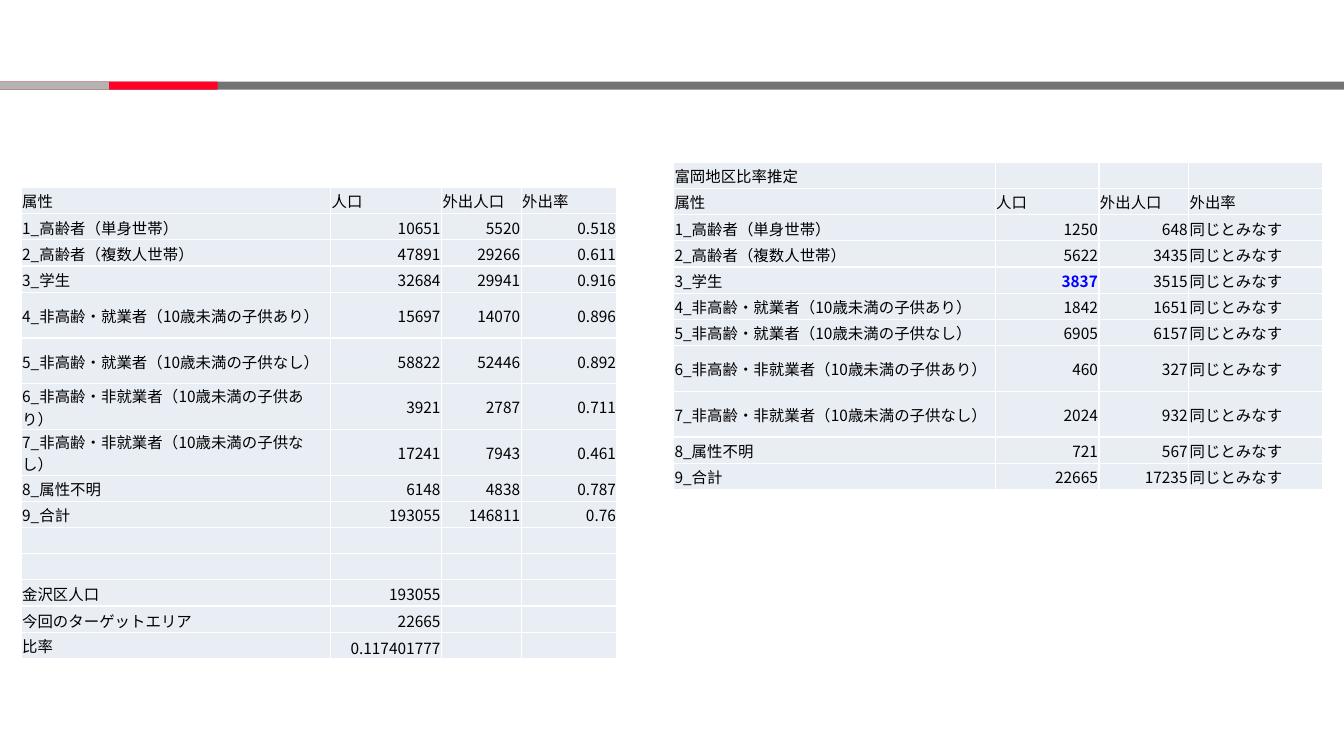
"""Build a slide with two population tables under a three-colour bar."""
from lxml.etree import SubElement
from pptx import Presentation
from pptx.dml.color import RGBColor
from pptx.enum.shapes import MSO_SHAPE
from pptx.enum.text import MSO_ANCHOR, PP_ALIGN
from pptx.oxml import parse_xml
from pptx.oxml.ns import nsdecls, qn
from pptx.util import Inches, Pt

FONT = "Noto Sans CJK JP"
BLACK = RGBColor(0x00, 0x00, 0x00)
BLUE = RGBColor(0x00, 0x00, 0xFF)
PALE = RGBColor(0xE9, 0xED, 0xF4)
DARK = RGBColor(0x73, 0x73, 0x73)
RED = RGBColor(0xFF, 0x00, 0x26)
GREY = RGBColor(0xB3, 0xB3, 0xB3)
ROW = 0.26

deck = Presentation()
deck.slide_width, deck.slide_height = Inches(13.33), Inches(7.5)
slide = deck.slides.add_slide(deck.slide_layouts[6])

for wide, color in [(13.33, DARK), (2.16, RED), (1.08, GREY)]:
    bar = slide.shapes.add_shape(
        MSO_SHAPE.RECTANGLE, 0, Inches(0.81), Inches(wide), Inches(0.08))
    bar.shadow.inherit = False
    bar.fill.solid()
    bar.fill.fore_color.rgb = color
    bar.line.fill.background()

HEAD = ("属性", "人口", "外出人口", "外出率")
KINDS = [
    "1_高齢者（単身世帯）",
    "2_高齢者（複数人世帯）",
    "3_学生",
    "4_非高齢・就業者（10歳未満の子供あり）",
    "5_非高齢・就業者（10歳未満の子供なし）",
    "6_非高齢・非就業者（10歳未満の子供あり）",
    "7_非高齢・非就業者（10歳未満の子供なし）",
    "8_属性不明",
    "9_合計",
]
WARD = [
    ("10651", "5520", "0.518"),
    ("47891", "29266", "0.611"),
    ("32684", "29941", "0.916"),
    ("15697", "14070", "0.896"),
    ("58822", "52446", "0.892"),
    ("3921", "2787", "0.711"),
    ("17241", "7943", "0.461"),
    ("6148", "4838", "0.787"),
    ("193055", "146811", "0.76"),
]
AREA = [
    ("1250", "648"), ("5622", "3435"), ("3837", "3515"),
    ("1842", "1651"), ("6905", "6157"), ("460", "327"),
    ("2024", "932"), ("721", "567"), ("22665", "17235"),
]
BLANK = ("",) * 4
left = [HEAD, *[(kind, *nums) for kind, nums in zip(KINDS, WARD)], BLANK, BLANK,
        ("金沢区人口", "193055", "", ""),
        ("今回のターゲットエリア", "22665", "", ""),
        ("比率", "0.117401777", "", "")]
right = [("富岡地区比率推定", "", "", ""), HEAD,
         *[(kind, *nums, "同じとみなす") for kind, nums in zip(KINDS, AREA)]]
LOW = ("今回のターゲットエリア", "22665", "0.117401777")

for x, y, cols, rows in [(0.21, 1.86, (3.07, 1.1, 0.79, 0.95), left),
                         (6.68, 1.61, (3.19, 1.03, 0.89, 1.33), right)]:
    grid = slide.shapes.add_table(
        len(rows), len(cols), Inches(x), Inches(y),
        Inches(sum(cols)), Inches(ROW * len(rows))).table
    grid.first_row = grid.horz_banding = False
    for col, wide in zip(grid.columns, cols):
        col.width = Inches(wide)
    for r, row in enumerate(rows):
        grid.rows[r].height = Inches(ROW)
        for c, text in enumerate(row):
            cell = grid.cell(r, c)
            cell.text = text
            cell.margin_left = cell.margin_right = cell.margin_top = Inches(0.01)
            cell.margin_bottom = 0
            low = text in LOW and rows is left
            cell.vertical_anchor = MSO_ANCHOR.BOTTOM if low else MSO_ANCHOR.MIDDLE
            cell.fill.solid()
            cell.fill.fore_color.rgb = PALE
            for i, side in enumerate(("lnL", "lnR", "lnT", "lnB")):
                cell._tc.tcPr.insert(i, parse_xml(
                    f'<a:{side} {nsdecls("a")} w="12700"><a:solidFill>'
                    f'<a:srgbClr val="FFFFFF"/></a:solidFill></a:{side}>'))
            para = cell.text_frame.paragraphs[0]
            if c and text[:1].isdigit():
                para.alignment = PP_ALIGN.RIGHT
            mark = text == "3837"
            para.font.size = Pt(11)
            para.font.name = FONT
            para.font.bold = mark
            para.font.color.rgb = BLUE if mark else BLACK
            SubElement(para._p.pPr.find(qn("a:defRPr")), qn("a:ea"), typeface=FONT)

deck.save("out.pptx")
